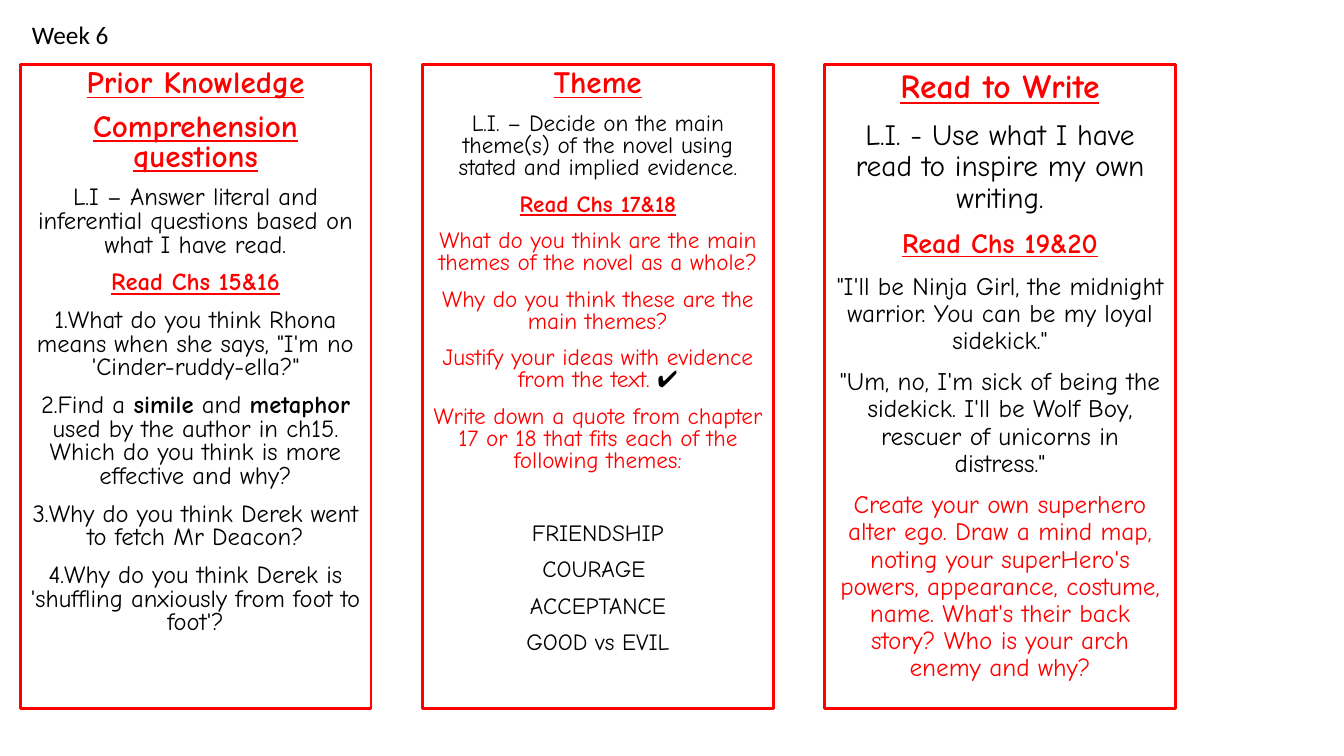
from dataclasses import dataclass

from pptx import Presentation
from pptx.dml.color import RGBColor
from pptx.enum.shapes import MSO_SHAPE
from pptx.enum.text import MSO_ANCHOR, PP_ALIGN
from pptx.util import Pt

RECTANGLE = MSO_SHAPE.RECTANGLE
TOP = MSO_ANCHOR.TOP
LEFT = PP_ALIGN.LEFT
CENTER = PP_ALIGN.CENTER


@dataclass(frozen=True)
class Theme:
    red: RGBColor = RGBColor(0xFF, 0, 0)
    black: RGBColor = RGBColor(0, 0, 0)
    lesson_font: str = "Comic Neue"
    week_font: str = "Calibri"
    week_size: float = 18
    knowledge_title: float = 22.2
    knowledge_body: float = 17.6
    theme_title: float = 22.2
    theme_body: float = 16.6
    writing_title: float = 24
    writing_intention: float = 21
    writing_chapters: float = 20
    writing_body: float = 18
    border: float = 2
    gap: float = 10
    themes_gap: float = 36


THEME = Theme()
HEADING = {"color": THEME.red, "bold": True, "underline": True}
TASK = {"color": THEME.red}


def write(frame, text, size, font=THEME.lesson_font, color=THEME.black, bold=False,
          underline=False, align=CENTER, spacing=1.0, before=0):
    first = frame.paragraphs[0]
    paragraph = frame.add_paragraph() if first.runs else first
    paragraph.alignment = align
    paragraph.line_spacing = spacing
    paragraph.space_before = Pt(before)
    pieces = [(text, {})] if isinstance(text, str) else text
    for words, changes in pieces:
        run = paragraph.add_run()
        run.text = words
        run.font.name = font
        run.font.size = Pt(size)
        run.font.bold = changes.get("bold", bold)
        run.font.underline = underline
        run.font.color.rgb = changes.get("color", color)


def add_lesson(slide, box, lines, spacing):
    panel = slide.shapes.add_shape(RECTANGLE, *(Pt(length) for length in box))
    panel.shadow.inherit = False
    panel.fill.background()
    panel.line.color.rgb = THEME.red
    panel.line.width = Pt(THEME.border)
    frame = panel.text_frame
    frame.word_wrap = True
    frame.vertical_anchor = TOP
    for text, size, look in lines:
        write(frame, text, size, **{"spacing": spacing, "before": THEME.gap, **look})


def add_prior_knowledge(slide, box):
    title, body = THEME.knowledge_title, THEME.knowledge_body
    simile_question = [
        ("2.Find a ", {}), ("simile", {"bold": True}), (" and ", {}),
        ("metaphor", {"bold": True}),
        (" used by the author in ch15. Which do you think is more effective and why?", {}),
    ]
    add_lesson(slide, box, [
        ("Prior Knowledge", title, HEADING),
        ("Comprehension questions", title, HEADING),
        ("L.I – Answer literal and inferential questions based on what I have read.", body, {}),
        ("Read Chs 15&16", body, HEADING),
        ("1.What do you think Rhona means when she says, \"I'm no 'Cinder-ruddy-ella?\"", body, {}),
        (simile_question, body, {}),
        ("3.Why do you think Derek went to fetch Mr Deacon?", body, {}),
        ("4.Why do you think Derek is 'shuffling anxiously from foot to foot'?", body, {}),
    ], spacing=0.8)


def add_novel_theme(slide, box):
    body = THEME.theme_body
    evidence = [("Justify your ideas with evidence from the text. ", {}),
                ("✔", {"color": THEME.black})]
    add_lesson(slide, box, [
        ("Theme", THEME.theme_title, HEADING),
        ("L.I. – Decide on the main theme(s) of the novel using stated and implied evidence.",
         body, {}),
        ("Read Chs 17&18", body, HEADING),
        ("What do you think are the main themes of the novel as a whole?", body, TASK),
        ("Why do you think these are the main themes?", body, TASK),
        (evidence, body, TASK),
        ("Write down a quote from chapter 17 or 18 that fits each of the following themes:",
         body, TASK),
        ("FRIENDSHIP", body, {"before": THEME.themes_gap}),
        ("COURAGE ", body, {}),
        ("ACCEPTANCE", body, {}),
        ("GOOD vs EVIL", body, {}),
    ], spacing=0.8)


def add_read_to_write(slide, box):
    body = THEME.writing_body
    add_lesson(slide, box, [
        ("Read to Write", THEME.writing_title, HEADING),
        ("L.I. - Use what I have read to inspire my own writing.", THEME.writing_intention, {}),
        ("Read Chs 19&20", THEME.writing_chapters, HEADING),
        ("\"I'll be Ninja Girl, the midnight warrior. You can be my loyal sidekick.\"", body, {}),
        ("\"Um, no, I'm sick of being the sidekick. I'll be Wolf Boy, "
         "rescuer of unicorns in distress.\"", body, {}),
        ("Create your own superhero alter ego. Draw a mind map, noting your superHero's powers, "
         "appearance, costume, name. What's their back story? Who is your arch enemy and why?",
         body, TASK),
    ], spacing=0.9)


def add_week(slide, box):
    week = slide.shapes.add_textbox(*(Pt(length) for length in box))
    week.text_frame.word_wrap = True
    write(week.text_frame, "Week 6", THEME.week_size, font=THEME.week_font, align=LEFT)


def main():
    deck = Presentation()
    deck.slide_width, deck.slide_height = Pt(960), Pt(540)
    slide = deck.slides.add_slide(deck.slide_layouts[6])
    left, top, width, height, pitch = 14.4, 46.1, 250.6, 460, 287.3
    lessons = (add_prior_knowledge, add_novel_theme, add_read_to_write)
    for column, lesson in enumerate(lessons):
        lesson(slide, (left + column * pitch, top, width, height))
    add_week(slide, (15.8, 10.1, 139.7, 29))
    deck.save("out.pptx")


if __name__ == "__main__":
    main()
